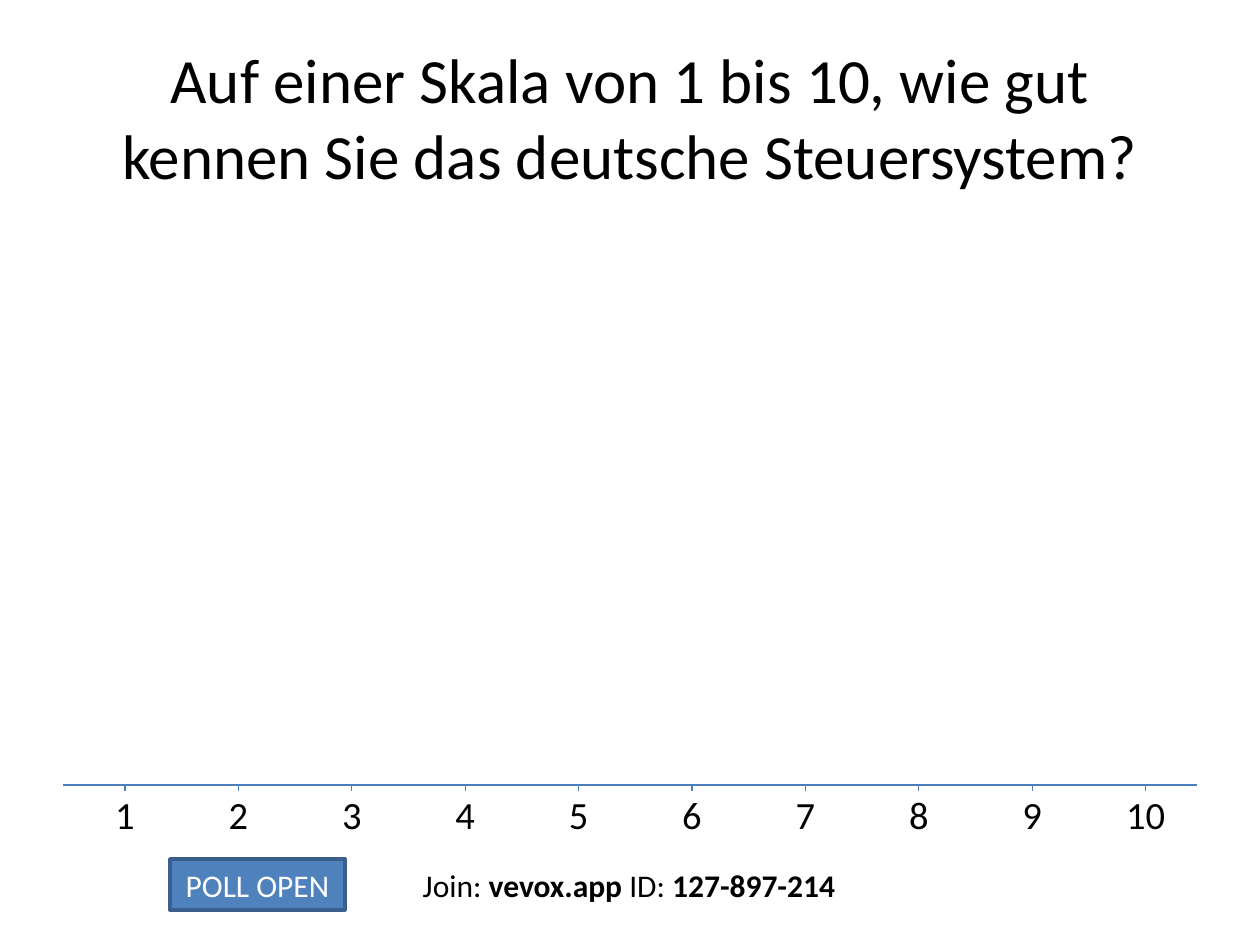
import pptx
import pptx.dml.color
import pptx.enum.shapes
import pptx.enum.text
import pptx.oxml
import pptx.util

PX = 914400 / 126
BLACK = pptx.dml.color.RGBColor(0x00, 0x00, 0x00)
WHITE = pptx.dml.color.RGBColor(0xFF, 0xFF, 0xFF)
BUTTON_FILL = pptx.dml.color.RGBColor(0x4F, 0x81, 0xBD)
BUTTON_LINE = pptx.dml.color.RGBColor(0x3A, 0x5F, 0x8C)
AXIS_COLOR = pptx.dml.color.RGBColor(0x4B, 0x7E, 0xBC)

presentation = pptx.Presentation()
presentation.slide_width = round(1260 * PX)
presentation.slide_height = round(945 * PX)
slide = presentation.slides.add_slide(presentation.slide_layouts[6])


def write_text(shape, runs, size, color=BLACK, wrap=False):
    """Fill a shape with one centred paragraph of (text, bold) runs."""
    frame = shape.text_frame
    frame.word_wrap = wrap
    frame.vertical_anchor = pptx.enum.text.MSO_ANCHOR.MIDDLE
    paragraph = frame.paragraphs[0]
    paragraph.alignment = pptx.enum.text.PP_ALIGN.CENTER
    paragraph.font.name = "Calibri"
    paragraph.font.size = pptx.util.Pt(size)
    paragraph.font.color.rgb = color
    for text, bold in runs:
        run = paragraph.add_run()
        run.text = text
        if bold:
            run.font.bold = True


def add_axis_line(x1, y1, x2, y2):
    line = slide.shapes.add_connector(
        pptx.enum.shapes.MSO_CONNECTOR.STRAIGHT,
        *(round(value * PX) for value in (x1, y1, x2, y2)))
    line.line.color.rgb = AXIS_COLOR
    line.line.width = pptx.util.Pt(0.75)
    line._element.spPr.append(pptx.oxml.parse_xml(
        '<a:effectLst xmlns:a="http://schemas.openxmlformats.org/drawingml/2006/main"/>'))


# Question
title = slide.shapes.add_textbox(*(round(value * PX) for value in (63, 38, 1134, 157)))
write_text(title, [("Auf einer Skala von 1 bis 10, wie gut kennen Sie das deutsche Steuersystem?", False)],
           36, wrap=True)

# Joining details and poll status
join_box = slide.shapes.add_textbox(*(round(value * PX) for value in (408, 859, 442, 51)))
write_text(join_box, [("Join: ", False), ("vevox.app", True), (" ID: ", False), ("127-897-214", True)], 18)

button = slide.shapes.add_shape(
    pptx.enum.shapes.MSO_SHAPE.RECTANGLE,
    *(round(value * PX) for value in (170, 859, 175, 51)))
button.shadow.inherit = False
button.fill.solid()
button.fill.fore_color.rgb = BUTTON_FILL
button.line.color.rgb = BUTTON_LINE
button.line.width = pptx.util.Pt(2)
write_text(button, [("POLL OPEN", False)], 18, WHITE)

# Scale: ten evenly spaced ticks with their labels
AXIS_Y = 785
FIRST_TICK = 125
TICK_COUNT = 10
TICK_GAP = 1134 / TICK_COUNT
add_axis_line(63, AXIS_Y, 1197, AXIS_Y)
for number in range(1, TICK_COUNT + 1):
    tick_x = FIRST_TICK + (number - 1) * TICK_GAP
    label_width = 45 if number < 10 else 64
    label = slide.shapes.add_textbox(
        *(round(value * PX) for value in (tick_x - label_width / 2, AXIS_Y, label_width, 59)))
    write_text(label, [(str(number), False)], 22)
    add_axis_line(tick_x, AXIS_Y, tick_x, AXIS_Y + 6)

presentation.save("out.pptx")
